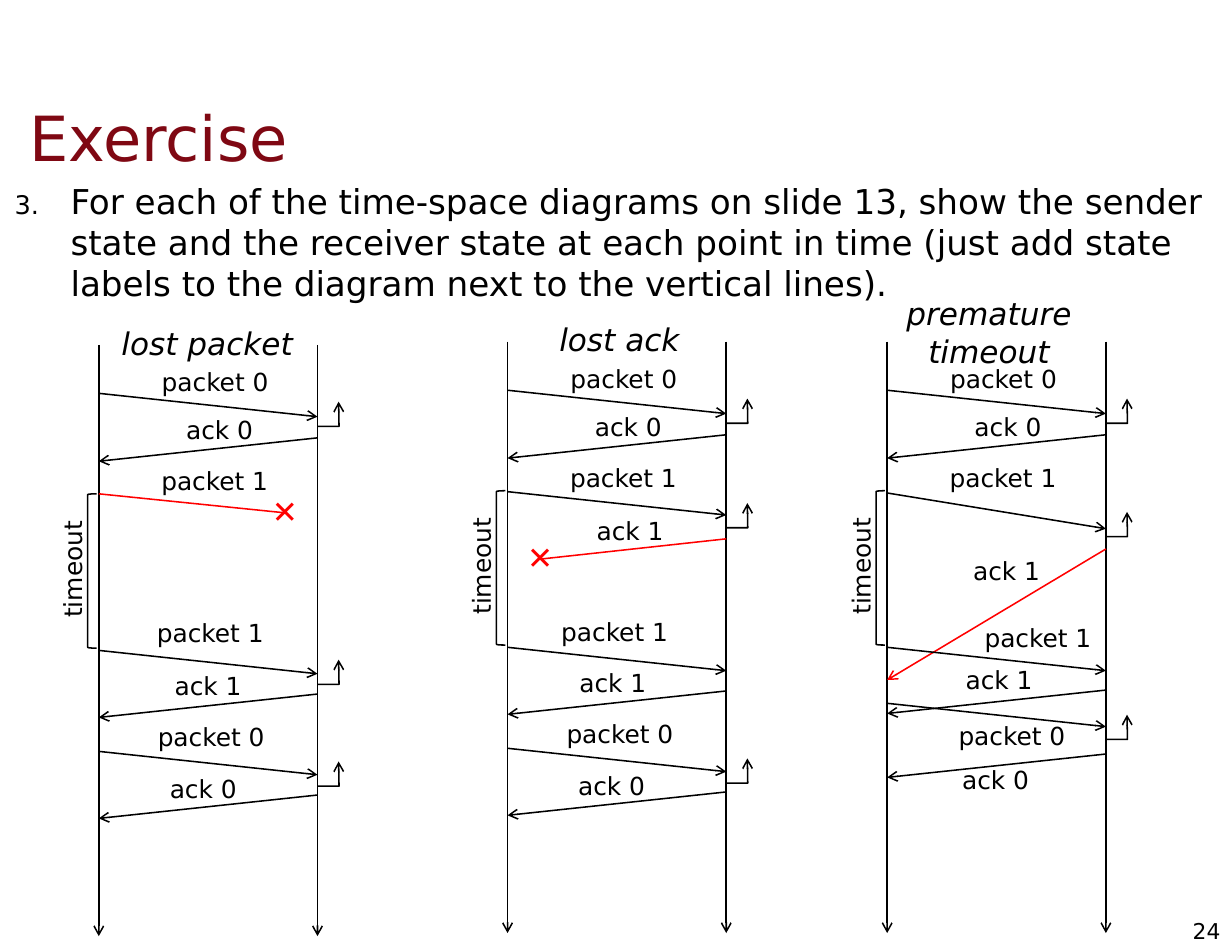
from lxml import etree
from pptx import Presentation
from pptx.dml.color import RGBColor
from pptx.enum.shapes import MSO_CONNECTOR, MSO_SHAPE
from pptx.enum.text import MSO_ANCHOR, MSO_AUTO_SIZE, PP_ALIGN
from pptx.oxml.ns import qn
from pptx.util import Cm, Pt

STRAIGHT = MSO_CONNECTOR.STRAIGHT
BRACKET = MSO_SHAPE.LEFT_BRACKET
MIDDLE, TOP = MSO_ANCHOR.MIDDLE, MSO_ANCHOR.TOP
LEFT, CENTER, RIGHT = PP_ALIGN.LEFT, PP_ALIGN.CENTER, PP_ALIGN.RIGHT
FONT, SYMBOL_FONT = "DejaVu Sans", "Arial"
BLACK, RED, MAROON = "000000", "FF0000", "7F0813"

# Content
TITLE = "Exercise"
QUESTION = ("For each of the time-space diagrams on slide 13, show the sender "
            "state and the receiver state at each point in time (just add state "
            "labels to the diagram next to the vertical lines).")
NUMBER = 3
PAGE = "24"

# Lengths in cm, measured from the top of each sender line
GAP, LENGTH = 4.96, 13.41
LOST_REACH = 4.22
RISE = 0.53

# Message: label, label centre x, label centre y, start y, end y, state
# Packets run from sender to receiver, acks the other way
OPENING = [
    ("packet 0", 2.64, 0.83, 1.1, 1.1 + RISE, "ok"),
    ("ack 0", 2.74, 1.92, 2.11, 2.11 + RISE, "ok"),
]
DIAGRAMS = [
    {"title": ["lost packet"], "origin": (2.24, 7.82), "title_at": (2.46, -0.05),
     "deliveries": [1.85, 7.7, 10.01],
     "messages": [
         ("packet 1", 2.63, 3.09, 3.38, 3.81, "lost"),
         ("packet 1", 2.53, 6.52, 6.93, 6.93 + RISE, "ok"),
         ("ack 1", 2.48, 7.73, 7.92, 7.92 + RISE, "ok"),
         ("packet 0", 2.55, 8.88, 9.22, 9.22 + RISE, "ok"),
         ("ack 0", 2.37, 10.07, 10.21, 10.21 + RISE, "ok")]},
    {"title": ["lost ack"], "origin": (11.51, 7.75), "title_at": (2.54, -0.05),
     "deliveries": [1.85, 4.22, 10.01],
     "messages": [
         ("packet 1", 2.63, 3.09, 3.4, 3.4 + RISE, "ok"),
         ("ack 1", 2.78, 4.28, 4.47, 4.93, "lost"),
         ("packet 1", 2.43, 6.57, 6.93, 6.93 + RISE, "ok"),
         ("ack 1", 2.39, 7.73, 7.92, 7.92 + RISE, "ok"),
         ("packet 0", 2.55, 8.88, 9.22, 9.22 + RISE, "ok"),
         ("ack 0", 2.36, 10.07, 10.21, 10.21 + RISE, "ok")]},
    {"title": ["premature", "timeout"], "origin": (20.12, 7.75),
     "title_at": (2.31, -0.22),
     "deliveries": [1.85, 4.42, 9.02],
     "messages": [
         ("packet 1", 2.63, 3.09, 3.43, 4.24, "ok"),
         ("ack 1", 2.71, 5.19, 4.7, 7.67, "late"),
         ("packet 1", 3.42, 6.72, 6.93, 6.93 + RISE, "ok"),
         ("ack 1", 2.54, 7.66, 7.9, 7.9 + RISE, "ok"),
         ("packet 0", 2.83, 8.93, 8.2, 8.2 + RISE, "ok"),
         ("ack 0", 2.46, 9.92, 9.35, 9.35 + RISE, "ok")]},
]


def rgb(value):
    return RGBColor.from_string(value)


def add_run(p, text, size, color=BLACK, font=FONT, italic=False):
    r = p.add_run()
    r.text = text
    r.font.name, r.font.size, r.font.italic = font, Pt(size), italic
    r.font.color.rgb = rgb(color)


def set_frame(tf, x_inset, y_inset, anchor):
    tf.word_wrap = True
    tf.auto_size = MSO_AUTO_SIZE.NONE
    tf.vertical_anchor = anchor
    tf.margin_left = tf.margin_right = Cm(x_inset)
    tf.margin_top = tf.margin_bottom = Cm(y_inset)


def place(sp, x, y, w, h):
    sp.left, sp.top, sp.width, sp.height = Cm(x), Cm(y), Cm(w), Cm(h)


def add_label(x, y, w, h, lines, size, align=CENTER, **style):
    """Text box centred on (x, y)."""
    sp = slide.shapes.add_textbox(Cm(x - w / 2), Cm(y - h / 2), Cm(w), Cm(h))
    set_frame(sp.text_frame, 0, 0, MIDDLE)
    p = sp.text_frame.paragraphs[0]
    p.alignment = align
    for i, line in enumerate(lines):
        if i:
            p.add_line_break()
        add_run(p, line, size, **style)
    return sp


def style_line(sp, color=BLACK, arrow=True):
    sp.line.color.rgb = rgb(color)
    sp.line.width = Pt(1)
    if arrow:
        etree.SubElement(sp.line._get_or_add_ln(), qn("a:tailEnd"), type="arrow")


def add_line(x1, y1, x2, y2, color=BLACK, arrow=True):
    sp = slide.shapes.add_connector(STRAIGHT, Cm(x1), Cm(y1), Cm(x2), Cm(y2))
    style_line(sp, color, arrow)
    etree.SubElement(sp._element.spPr, qn("a:effectLst"))


def add_delivery(x, y):
    """Hook arrow that hands a packet up at the receiver."""
    fb = slide.shapes.build_freeform(Cm(x), Cm(y))
    fb.add_line_segments([(Cm(x + 0.49), Cm(y)), (Cm(x + 0.48), Cm(y - 0.56))],
                         close=False)
    sp = fb.convert_to_shape()
    sp.fill.background()
    sp.shadow.inherit = False
    style_line(sp)


def add_message(x, y, label, label_x, label_y, start, end, state):
    x1, x2 = (0, GAP) if label.startswith("packet") else (GAP, 0)
    lost = state == "lost"
    if lost:
        x2 = x1 + (LOST_REACH if x2 > x1 else -LOST_REACH)
    add_line(x + x1, y + start, x + x2, y + end,
             BLACK if state == "ok" else RED, not lost)
    add_label(x + label_x, y + label_y, 2.64, 0.69, [label], 16)
    if lost:
        add_label(x + x2, y + end - 0.05, 0.91, 0.86, ["✕"], 20,
                  color=RED, font=SYMBOL_FONT)


def add_diagram(diagram):
    x, y = diagram["origin"]
    for line_x in (x, x + GAP):
        add_line(line_x, y, line_x, y + LENGTH)
    for message in OPENING + diagram["messages"]:
        add_message(x, y, *message)
    for delivery in diagram["deliveries"]:
        add_delivery(x + GAP, y + delivery)
    lines = diagram["title"]
    title_x, title_y = diagram["title_at"]
    add_label(x + title_x, y + title_y, 4.4, 0.85 * len(lines), lines, 20,
              italic=True)
    # Timeout bracket
    sp = slide.shapes.add_shape(BRACKET, Cm(x - 0.25), Cm(y + 3.38), Cm(0.2), Cm(3.5))
    sp.fill.background()
    sp.shadow.inherit = False
    style_line(sp, arrow=False)
    add_label(x - 0.6, y + 5.09, 2.21, 0.69, ["timeout"], 16).rotation = 270


prs = Presentation()
prs.slide_width, prs.slide_height = Cm(27.94), Cm(21.59)
slide = prs.slides.add_slide(prs.slide_layouts[1])

# Title
title = slide.shapes.title
place(title, 0.38, 1.78, 26.75, 2.64)
set_frame(title.text_frame, 0.28, 0.15, MIDDLE)
p = title.text_frame.paragraphs[0]
p.alignment = LEFT
add_run(p, TITLE, 40, MAROON)

# Numbered question
body = slide.placeholders[1]
place(body, 0.05, 3.94, 27.89, 3.33)
set_frame(body.text_frame, 0.28, 0.15, TOP)
p = body.text_frame.paragraphs[0]
p.alignment = LEFT
p.space_before = Pt(0)
pPr = p._p.get_or_add_pPr()
pPr.set("marL", str(Cm(1.27)))
pPr.set("indent", str(-Cm(1.27)))
bullet_color = etree.SubElement(pPr, qn("a:buClr"))
etree.SubElement(bullet_color, qn("a:srgbClr"), val=BLACK)
etree.SubElement(pPr, qn("a:buSzPct"), val="75000")
etree.SubElement(pPr, qn("a:buFont"), typeface=FONT)
etree.SubElement(pPr, qn("a:buAutoNum"), type="arabicPeriod", startAt=str(NUMBER))
add_run(p, QUESTION, 22)

# Page number
add_label(27.25, 21.11, 0.86, 0.61, [PAGE], 14, RIGHT)

# Time-space diagrams
for diagram in DIAGRAMS:
    add_diagram(diagram)

prs.save("out.pptx")
